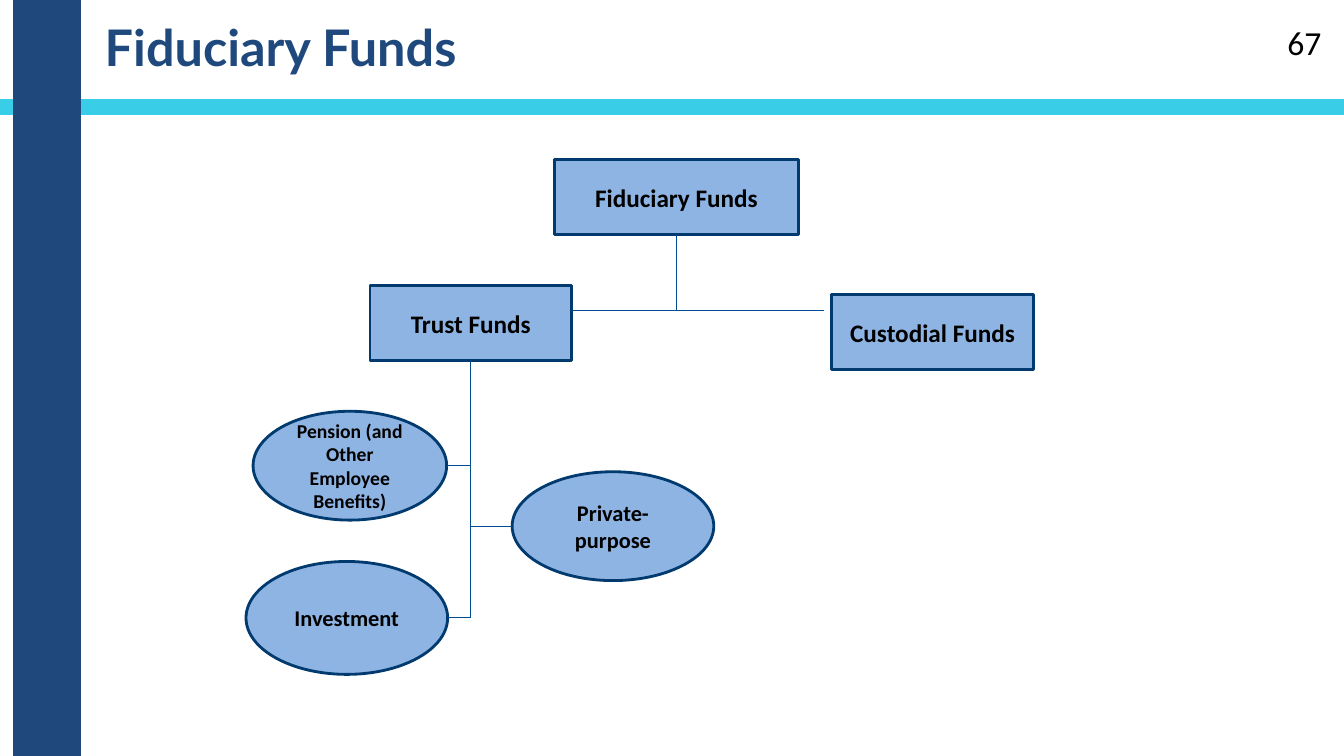
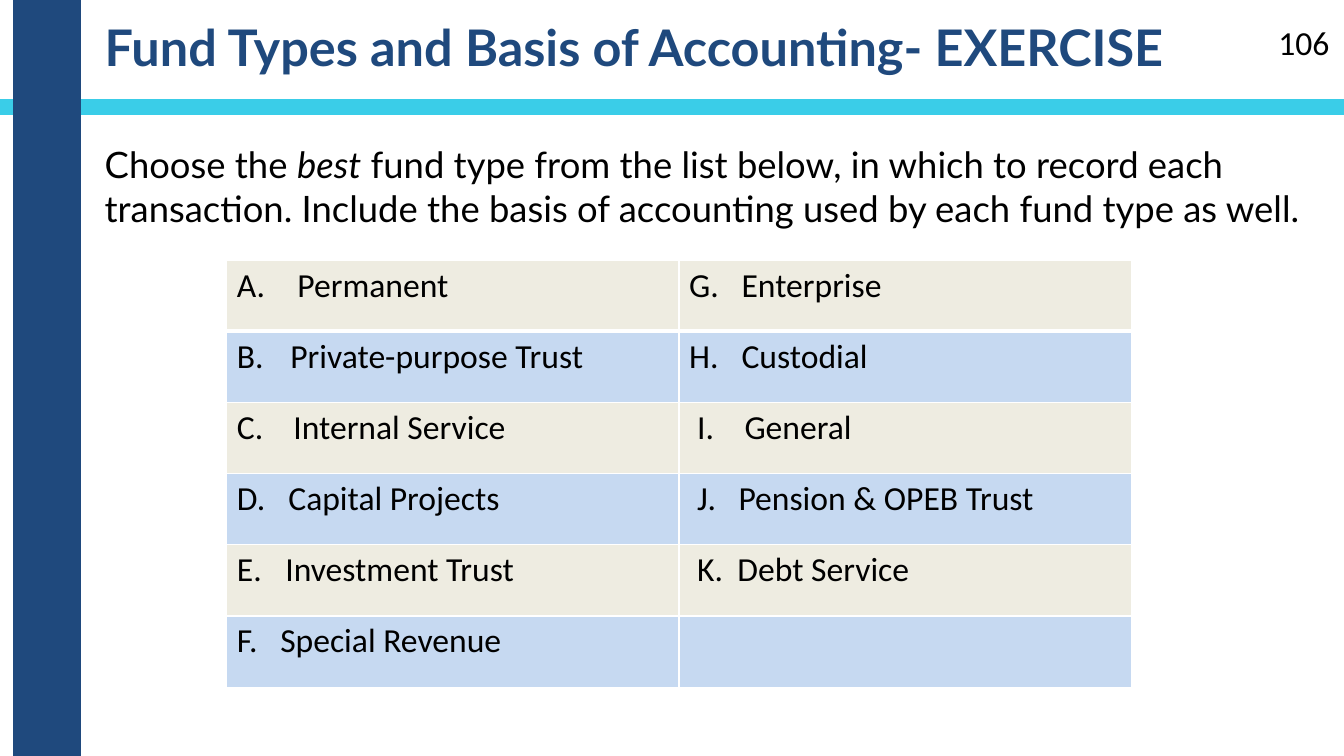
from lxml import etree
from pptx import Presentation
from pptx.dml.color import RGBColor
from pptx.enum.shapes import MSO_CONNECTOR, MSO_SHAPE
from pptx.enum.text import MSO_ANCHOR, PP_ALIGN
from pptx.oxml.ns import qn
from pptx.util import Inches, Pt

RECTANGLE, ELLIPSE = MSO_SHAPE.RECTANGLE, MSO_SHAPE.OVAL
STRAIGHT = MSO_CONNECTOR.STRAIGHT
TOP, MIDDLE = MSO_ANCHOR.TOP, MSO_ANCHOR.MIDDLE
LEFT, CENTER = PP_ALIGN.LEFT, PP_ALIGN.CENTER
BOTTOM_SIDE = 2

COLORS = {
    "navy": "1F497D",
    "cyan": "3ACDE8",
    "text": "000000",
    "node": "8EB4E3",
    "node_line": "003A6E",
    "connector": "004C92",
    "row_odd": "EEECE1",
    "row_even": "C6D9F1",
    "grid": "FFFFFF",
}
TITLE_FONT, BODY_FONT = "Lato", "Calibri"
SLIDE_WIDTH, SLIDE_HEIGHT = 13.33, 7.5

FUND_NODES = {
    "private": (ELLIPSE, (2.64, 3.1, 2, 1.08), "Private-purpose", 16),
    "pension": (ELLIPSE, (0.07, 2.5, 1.92, 1.08), "Pension (and Other Employee Benefits)", 14),
    "investment": (ELLIPSE, (0, 3.99, 2, 1.12), "Investment", 16),
    "fiduciary": (RECTANGLE, (3.06, 0, 2.42, 0.75), "Fiduciary Funds", 18),
    "trust": (RECTANGLE, (1.23, 1.25, 2, 0.75), "Trust Funds", 18),
    "custodial": (RECTANGLE, (5.81, 1.34, 2, 0.75), "Custodial Funds", 18),
}

# Each entry: wording, letter offset and wording offset in inches.
FUND_TYPES = [
    [("Permanent", 0, 0.6), ("Private-purpose Trust", 0, 0.53), ("Internal Service", 0, 0.56),
     ("Capital Projects", 0, 0.51), ("Investment Trust", 0, 0.48), ("Special Revenue", 0, 0.43)],
    [("Enterprise", 0, 0.52), ("Custodial", 0, 0.52), ("General", 0.08, 0.55),
     ("Pension & OPEB Trust", 0.08, 0.49), ("Debt Service", 0.08, 0.48)],
]


def color(name):
    """Return a named colour."""
    return RGBColor.from_string(COLORS[name])


def inches(box):
    """Convert a box of numbers to lengths."""
    return [Inches(value) for value in box]


def style_paragraph(paragraph, size, font=BODY_FONT, shade="text", bold=False, align=LEFT):
    """Set the font and alignment of a paragraph."""
    paragraph.alignment = align
    paragraph.font.name = font
    paragraph.font.size = Pt(size)
    paragraph.font.bold = bold
    paragraph.font.color.rgb = color(shade)


def add_text(slide, box, runs, size, anchor=TOP, **style):
    """Add a text box from pairs of wording and italic flag."""
    frame = slide.shapes.add_textbox(*inches(box)).text_frame
    frame.word_wrap = True
    frame.vertical_anchor = anchor
    paragraph = frame.paragraphs[0]
    for wording, italic in runs:
        run = paragraph.add_run()
        run.text = wording
        if italic:
            run.font.italic = True
    style_paragraph(paragraph, size, **style)


def add_box(slide, kind, box, fill, line):
    """Add a filled and outlined shape without shadow."""
    shape = slide.shapes.add_shape(kind, *inches(box))
    shape.shadow.inherit = False
    shape.fill.solid()
    shape.fill.fore_color.rgb = color(fill)
    shape.line.color.rgb = color(line)
    shape.line.width = Pt(2)
    return shape


def add_line(slide, start, end):
    """Add a thin connector between two points."""
    connector = slide.shapes.add_connector(STRAIGHT, *inches((*start, *end)))
    connector.line.color.rgb = color("connector")
    connector.line.width = Pt(0.75)
    etree.SubElement(connector._element.spPr, qn("a:effectLst"))
    return connector


def add_slide(presentation, title, number, number_left):
    """Add a slide with bands, title and page number."""
    slide = presentation.slides.add_slide(presentation.slide_layouts[6])
    add_box(slide, RECTANGLE, (0, 1, SLIDE_WIDTH, 0.13), "cyan", "cyan")
    add_box(slide, RECTANGLE, (0.14, 0, 0.65, SLIDE_HEIGHT), "navy", "navy")
    add_text(slide, (0.94, 0, 12.25, 0.92), [(title, False)], 36, MIDDLE,
             font=TITLE_FONT, shade="navy", bold=True)
    add_text(slide, (number_left, 0.17, SLIDE_WIDTH - number_left, 0.4), [(number, False)], 24)
    return slide


def add_fund_tree(slide, left, top):
    """Draw the tree of fiduciary funds from a top left corner."""
    shapes, boxes = {}, {}
    for name, (kind, (x, y, width, height), wording, size) in FUND_NODES.items():
        boxes[name] = (left + x, top + y, width, height)
        shape = shapes[name] = add_box(slide, kind, boxes[name], "node", "node_line")
        frame = shape.text_frame
        frame.word_wrap = True
        frame.vertical_anchor = MIDDLE
        frame.text = wording
        style_paragraph(frame.paragraphs[0], size, bold=True, align=CENTER)

    def middle(name):
        """Return the centre of a node."""
        x, y, width, height = boxes[name]
        return x + width / 2, y + height / 2

    def right(name):
        """Return the right edge of a node."""
        return boxes[name][0] + boxes[name][2]

    trunk = middle("trust")[0]
    stem = middle("fiduciary")[0]
    crossbar = top + 1.5
    trust_bottom = boxes["trust"][1] + boxes["trust"][3]
    root_bottom = boxes["fiduciary"][1] + boxes["fiduciary"][3]
    trunk_line = add_line(slide, (trunk, trust_bottom), (trunk, middle("investment")[1]))
    trunk_line.begin_connect(shapes["trust"], BOTTOM_SIDE)
    for name, edge in (("private", boxes["private"][0]),
                       ("pension", right("pension")),
                       ("investment", right("investment"))):
        height = middle(name)[1]
        add_line(slide, (trunk, height), (edge, height))
    stem_line = add_line(slide, (stem, root_bottom), (stem, crossbar))
    stem_line.begin_connect(shapes["fiduciary"], BOTTOM_SIDE)
    for edge in (right("trust"), boxes["custodial"][0] - 0.08):
        add_line(slide, (stem, crossbar), (edge, crossbar))


def set_borders(cell, bottom):
    """Give a cell white borders with a chosen bottom width."""
    properties = cell._tc.get_or_add_tcPr()
    for position, (tag, width) in enumerate((("a:lnL", 1), ("a:lnR", 1), ("a:lnT", 1), ("a:lnB", bottom))):
        line = etree.Element(qn(tag), w=str(Pt(width)))
        fill = etree.SubElement(line, qn("a:solidFill"))
        etree.SubElement(fill, qn("a:srgbClr"), val=COLORS["grid"])
        properties.insert(position, line)


def number_paragraph(paragraph, number, letter_offset, text_offset):
    """Give a paragraph a lettered bullet and a hanging indent."""
    properties = paragraph._p.get_or_add_pPr()
    properties.set("marL", str(Inches(text_offset)))
    properties.set("indent", str(Inches(letter_offset - text_offset)))
    etree.SubElement(properties, qn("a:buFont"), typeface=BODY_FONT)
    etree.SubElement(properties, qn("a:buAutoNum"), type="alphaUcPeriod", startAt=str(number))


def add_fund_table(slide, box):
    """Add the lettered table of fund types in a box."""
    row_count, column_count = len(FUND_TYPES[0]), len(FUND_TYPES)
    table = slide.shapes.add_table(row_count, column_count, *inches(box)).table
    for row_index in range(row_count):
        for column_index, entries in enumerate(FUND_TYPES):
            cell = table.cell(row_index, column_index)
            cell.fill.solid()
            cell.fill.fore_color.rgb = color("row_even" if row_index % 2 else "row_odd")
            set_borders(cell, 1 if row_index else 3)
            if row_index < len(entries):
                wording, letter_offset, text_offset = entries[row_index]
                paragraph = cell.text_frame.paragraphs[0]
                paragraph.text = wording
                number = column_index * row_count + row_index + 1
                number_paragraph(paragraph, number, letter_offset, text_offset)
                style_paragraph(paragraph, 24)


def build_tree_slide(presentation):
    """Build the slide with the fund tree."""
    slide = add_slide(presentation, "Fiduciary Funds", "67", 12.67)
    add_fund_tree(slide, 2.44, 1.58)


def build_exercise_slide(presentation):
    """Build the slide with the exercise."""
    slide = add_slide(presentation, "Fund Types and Basis of Accounting- EXERCISE", "106", 12.58)
    add_text(slide, (0.94, 1.36, 12.25, 1), [
        ("Choose the ", False),
        ("best", True),
        (" fund type from the list below, in which to record each transaction. "
         "Include the basis of accounting used by each fund type as well.", False),
    ], 26, font=TITLE_FONT)
    add_fund_table(slide, (2.25, 2.58, 8.97, 4.24))


def main():
    """Build and save the presentation."""
    presentation = Presentation()
    presentation.slide_width = Inches(SLIDE_WIDTH)
    presentation.slide_height = Inches(SLIDE_HEIGHT)
    build_tree_slide(presentation)
    build_exercise_slide(presentation)
    presentation.save("out.pptx")


if __name__ == "__main__":
    main()
